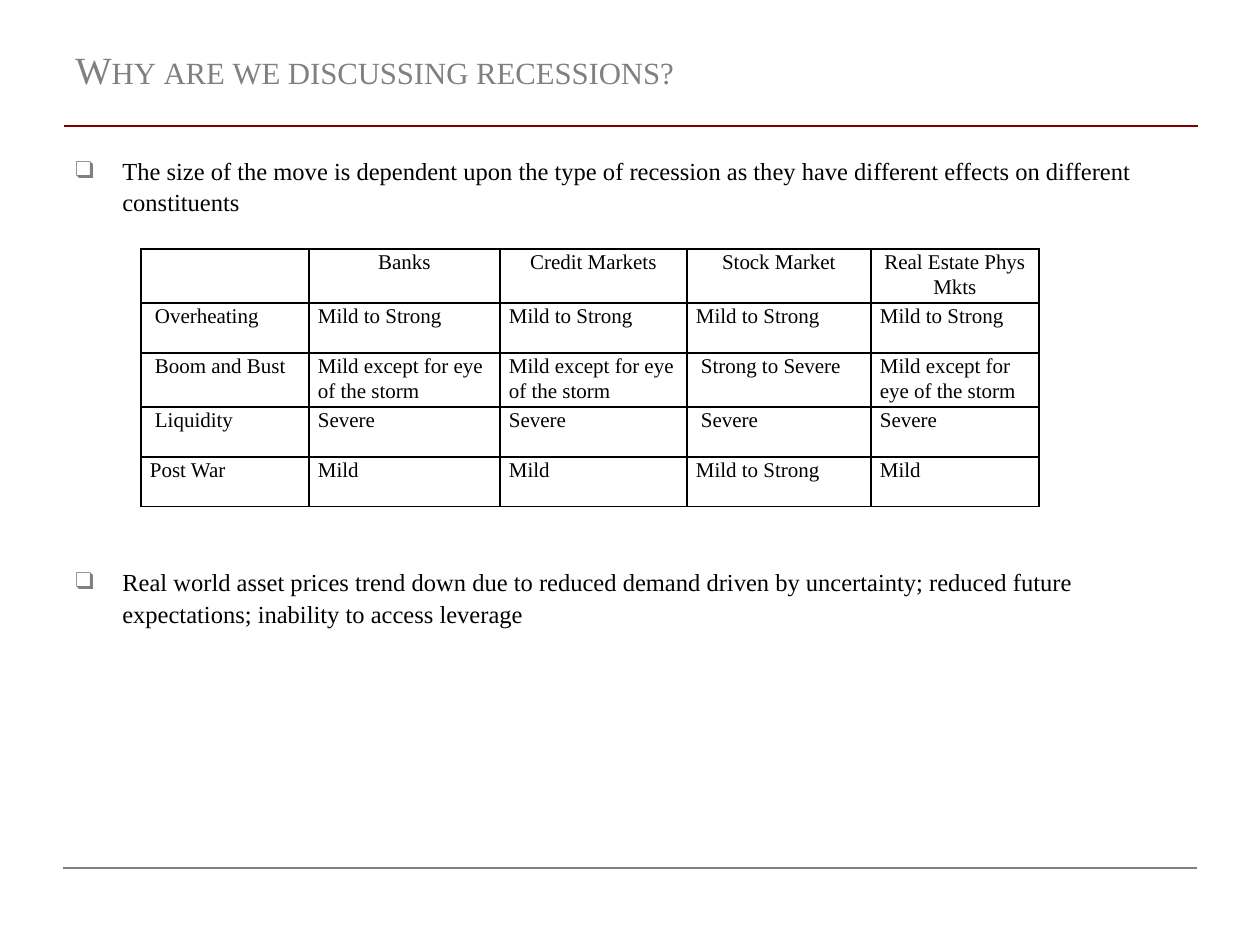
import dataclasses

import lxml.etree
import pptx
import pptx.dml.color
import pptx.enum.shapes
import pptx.enum.text
import pptx.oxml.ns
import pptx.util

PX = 914400 / 126


@dataclasses.dataclass(frozen=True)
class Theme:
    """Colours, font and type sizes of the deck."""

    font: str = "Times New Roman"
    ink: str = "000000"
    grey: str = "808080"
    red: str = "800000"
    title: int = 22
    body: int = 14
    cell: int = 12
    rule: float = 1.5
    border: int = 1


THEME = Theme()
TITLE = "Why are we discussing recessions?"
POINTS = [
    ("The size of the move is dependent upon the type of recession as they have "
     "different effects on different constituents", 0),
    ("Real world asset prices trend down due to reduced demand driven by uncertainty; "
     "reduced future expectations; inability to access leverage", 199),
]
COLUMNS = [168, 191, 187, 184, 168]
EYE = "Mild except for eye of the storm"
ROWS = [
    ["", "Banks", "Credit Markets", "Stock Market", "Real Estate Phys Mkts"],
    ["Overheating"] + ["Mild to Strong"] * 4,
    ["Boom and Bust", EYE, EYE, "Strong to Severe", EYE],
    ["Liquidity"] + ["Severe"] * 4,
    ["Post War", "Mild", "Mild", "Mild to Strong", "Mild"],
]
INDENTED = {(1, 0), (2, 0), (3, 0), (2, 3), (3, 3)}


def px(n):
    """Turn pixels into EMU."""
    return pptx.util.Emu(round(n * PX))


def rgb(value):
    """Turn a hex string into a colour."""
    return pptx.dml.color.RGBColor.from_string(value)


def sub(parent, tag, **attrs):
    """Append a DrawingML element to a parent."""
    return lxml.etree.SubElement(parent, pptx.oxml.ns.qn(tag), **attrs)


def add_run(p, text, size, color):
    """Add one styled run to a paragraph."""
    r = p.add_run()
    r.text = text
    r.font.name = THEME.font
    r.font.size = pptx.util.Pt(size)
    r.font.color.rgb = rgb(color)
    return r


def add_textbox(slide, x, y, w, h):
    """Add a wrapping text box and return its text frame."""
    tf = slide.shapes.add_textbox(px(x), px(y), px(w), px(h)).text_frame
    tf.word_wrap = True
    return tf


def add_rule(slide, x, y, w, color):
    """Draw a horizontal rule."""
    line = slide.shapes.add_connector(
        pptx.enum.shapes.MSO_CONNECTOR.STRAIGHT, px(x), px(y), px(x + w), px(y))
    line.line.color.rgb = rgb(color)
    line.line.width = pptx.util.Pt(THEME.rule)
    sub(line._element.spPr, "a:effectLst")


def add_title(slide, x, y, w, h):
    """Place the title in small capitals."""
    tf = add_textbox(slide, x, y, w, h)
    tf.vertical_anchor = pptx.enum.text.MSO_ANCHOR.MIDDLE
    r = add_run(tf.paragraphs[0], TITLE, THEME.title, THEME.grey)
    r.font._element.set("cap", "small")


def add_points(slide, x, y, w, h):
    """Place the bulleted points above and below the table."""
    tf = add_textbox(slide, x, y, w, h)
    tf.margin_top = px(9)
    for i, (text, before) in enumerate(POINTS):
        p = tf.add_paragraph() if i else tf.paragraphs[0]
        p.line_spacing = 1.07
        if before:
            p.space_before = pptx.util.Pt(before)
        pPr = p._p.get_or_add_pPr()
        pPr.set("marL", str(px(47)))
        pPr.set("indent", str(-px(47)))
        sub(sub(pPr, "a:buClr"), "a:srgbClr", val=THEME.grey)
        sub(pPr, "a:buFont", typeface=THEME.font)
        sub(pPr, "a:buChar", char="❑")
        add_run(p, text, THEME.body, THEME.ink)


def style_cell(cell):
    """Give a cell black borders, no fill and tight margins."""
    cell.margin_left = cell.margin_right = px(9)
    cell.margin_top = cell.margin_bottom = 0
    tcPr = cell._tc.get_or_add_tcPr()
    for side in ("a:lnL", "a:lnR", "a:lnT", "a:lnB"):
        ln = sub(tcPr, side, w=str(pptx.util.Pt(THEME.border)))
        sub(sub(ln, "a:solidFill"), "a:srgbClr", val=THEME.ink)
    cell.fill.background()


def add_effects_table(slide, x, y, row_height):
    """Place the table of recession types and their effects."""
    table = slide.shapes.add_table(
        len(ROWS), len(COLUMNS), px(x), px(y),
        px(sum(COLUMNS)), px(row_height * len(ROWS))).table
    table.first_row = table.horz_banding = False
    for column, width in zip(table.columns, COLUMNS):
        column.width = px(width)
    for i, row in enumerate(ROWS):
        table.rows[i].height = px(row_height)
        for j, text in enumerate(row):
            cell = table.cell(i, j)
            style_cell(cell)
            p = cell.text_frame.paragraphs[0]
            p.line_spacing = 1.07
            if i == 0:
                p.alignment = pptx.enum.text.PP_ALIGN.CENTER
            if (i, j) in INDENTED:
                p._p.get_or_add_pPr().set("marL", str(px(5)))
            if text:
                add_run(p, text, THEME.cell, THEME.ink)


def main():
    """Build the slide and save it."""
    prs = pptx.Presentation()
    prs.slide_width, prs.slide_height = px(1260), px(945)
    slide = prs.slides.add_slide(prs.slide_layouts[6])
    add_rule(slide, 64, 126, 1134, THEME.red)
    add_rule(slide, 63, 868, 1134, THEME.grey)
    add_title(slide, 63, 38, 849, 63)
    add_points(slide, 63, 145, 1134, 678)
    add_effects_table(slide, 141, 249, 50)
    prs.save("out.pptx")


if __name__ == "__main__":
    main()
